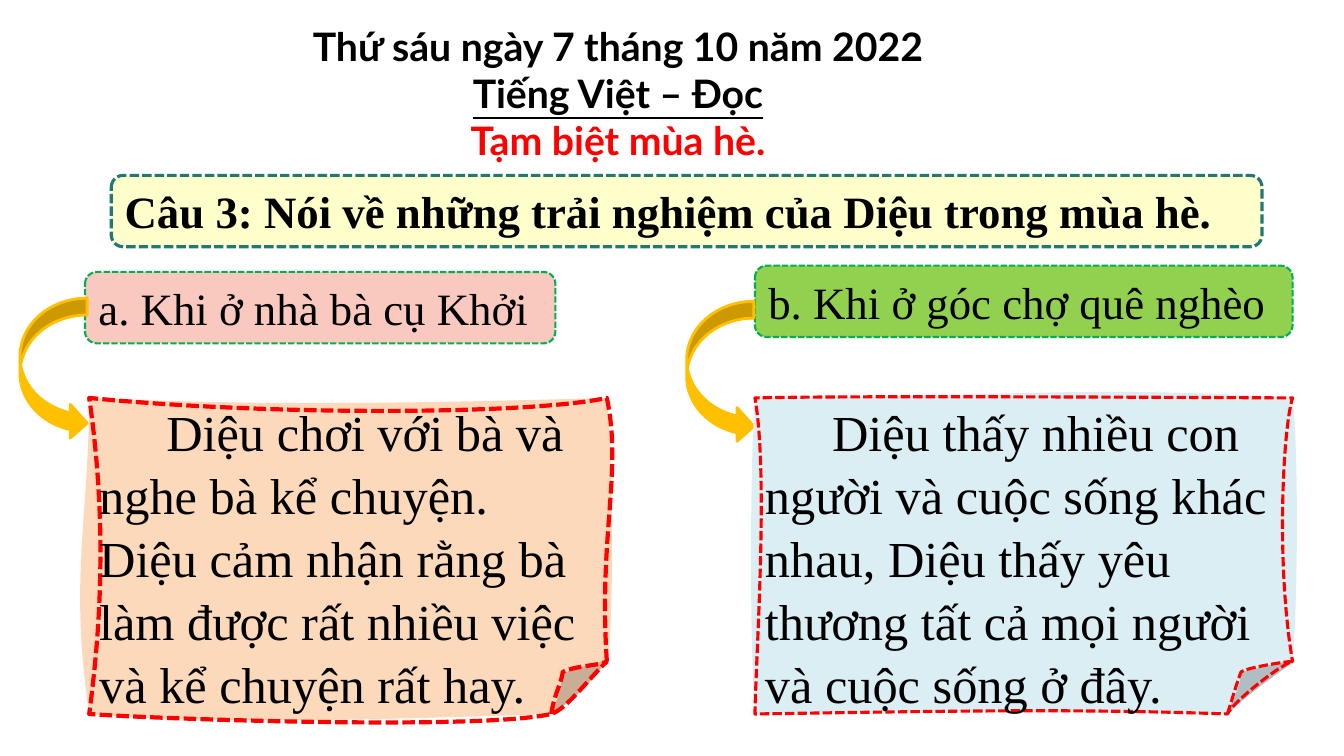
from lxml.etree import SubElement
from pptx import Presentation
from pptx.dml.color import RGBColor
from pptx.enum.dml import MSO_LINE
from pptx.enum.shapes import MSO_SHAPE
from pptx.enum.text import MSO_ANCHOR, MSO_AUTO_SIZE, PP_ALIGN
from pptx.oxml.ns import qn
from pptx.util import Pt

PX = 9525
BLACK = RGBColor(0x00, 0x00, 0x00)
RED = RGBColor(0xFF, 0x00, 0x00)
TEAL = RGBColor(0x21, 0x78, 0x75)
GREEN = RGBColor(0x00, 0xB0, 0x50)
LIME = RGBColor(0x92, 0xD0, 0x50)
GOLD = RGBColor(0xFF, 0xC0, 0x00)
CREAM = RGBColor(0xFF, 0xFF, 0xCC)
PINK = RGBColor(0xF9, 0xC9, 0xBF)
PEACH = RGBColor(0xFD, 0xD9, 0xBB)
SKY = RGBColor(0xDB, 0xEE, 0xF4)

# Each path is a start point, then curves of two control points and an end.
LEFT = {
    "page": [(85, 379),
             (225, 385), (333, 386), (578, 379),
             (583, 416), (586, 592), (578, 630),
             (566, 645), (544, 663), (525, 680),
             (400, 684), (219, 691), (85, 680),
             (66, 551), (84, 501), (85, 379)],
    "fold": [(525, 680),
             (529, 673), (537, 647), (536, 640),
             (546, 640), (563, 630), (578, 630),
             (561, 649), (555, 661), (525, 680)],
    "edge": [(525, 680),
             (528, 661), (535, 650), (536, 640),
             (548, 634), (571, 634), (578, 630),
             (561, 646), (539, 676), (525, 680),
             (455, 696), (133, 684), (85, 680),
             (95, 605), (103, 503), (85, 379),
             (257, 396), (504, 395), (578, 379),
             (593, 450), (570, 509), (578, 630)],
}
RIGHT = {
    "page": [(719, 379),
             (946, 379), (1028, 366), (1231, 379),
             (1237, 430), (1236, 577), (1231, 630),
             (1212, 636), (1189, 657), (1169, 680),
             (1078, 679), (824, 675), (719, 680),
             (714, 622), (714, 443), (719, 379)],
    "fold": [(1169, 680),
             (1173, 668), (1182, 654), (1182, 640),
             (1206, 635), (1220, 630), (1231, 630),
             (1224, 638), (1197, 653), (1169, 680)],
    "edge": [(1169, 680),
             (1173, 667), (1180, 644), (1182, 640),
             (1187, 636), (1224, 630), (1231, 630),
             (1219, 633), (1174, 669), (1169, 680),
             (1028, 675), (915, 677), (719, 680),
             (720, 622), (732, 453), (719, 379),
             (798, 377), (1032, 378), (1231, 379),
             (1222, 407), (1215, 537), (1231, 630)],
}
MODES = {
    "page": {"stroke": "0"},
    "fold": {"stroke": "0", "fill": "darkenLess"},
    "edge": {"fill": "none"},
}


class Board:
    head = "Lato"
    body = "Times New Roman"

    def __init__(self, slide):
        self.slide = slide

    def run(self, para, text, font, size, color=BLACK, bold=False, under=False):
        run = para.add_run()
        run.text = text
        face = run.font
        face.name, face.size, face.bold = font, Pt(size), bold
        face.underline = under
        face.color.rgb = color

    def paint(self, shape, fill, line, width, dash=True):
        shape.shadow.inherit = False
        shape.fill.solid()
        shape.fill.fore_color.rgb = fill
        shape.line.color.rgb = line
        shape.line.width = Pt(width)
        if dash:
            shape.line.dash_style = MSO_LINE.SQUARE_DOT

    def title(self, box, lines):
        shape = self.slide.shapes.title
        shape.left, shape.top, shape.width, shape.height = [v * PX for v in box]
        frame = shape.text_frame
        frame.auto_size = MSO_AUTO_SIZE.NONE
        frame.vertical_anchor = MSO_ANCHOR.TOP
        for i, (text, color, under) in enumerate(lines):
            para = frame.add_paragraph() if i else frame.paragraphs[0]
            para.alignment = PP_ALIGN.CENTER
            self.run(para, text, self.head, 28, color, True, under)

    def shape(self, kind, box):
        return self.slide.shapes.add_shape(kind, *[v * PX for v in box])

    def label(self, box, text, fill, line, width, bold=False):
        shape = self.shape(MSO_SHAPE.ROUNDED_RECTANGLE, box)
        self.paint(shape, fill, line, width)
        para = shape.text_frame.paragraphs[0]
        para.alignment = PP_ALIGN.LEFT
        self.run(para, text, self.body, 32, BLACK, bold)

    def arrow(self, box):
        shape = self.shape(MSO_SHAPE.CURVED_RIGHT_ARROW, box)
        self.paint(shape, GOLD, GOLD, 2, False)

    def sheet(self, paths, text, fill, width):
        """Draw a curled page with a folded corner and its text."""
        ends = paths["page"][::3]
        left, top = ends[0]
        wide, high = max(x for x, y in ends) - left, max(y for x, y in ends) - top
        form = self.slide.shapes.build_freeform(0, 0, PX)
        form.add_line_segments([(wide, 0), (wide, high), (0, high)])
        shape = form.convert_to_shape(left * PX, top * PX)
        self.curve(shape, paths, left, top, wide, high)
        self.paint(shape, fill, RED, width)
        frame = shape.text_frame
        frame.word_wrap = True
        frame.vertical_anchor = MSO_ANCHOR.MIDDLE
        para = frame.paragraphs[0]
        para.alignment = PP_ALIGN.LEFT
        para.line_spacing = 1.04
        para._p.get_or_add_pPr().set("indent", str(64 * PX))
        self.run(para, text, self.body, 36)

    def curve(self, shape, paths, left, top, wide, high):
        """Replace the straight outline with curved paths."""
        root = shape._element.spPr.find(".//" + qn("a:pathLst"))
        root.clear()
        for name, dots in paths.items():
            path = SubElement(root, qn("a:path"), w=str(wide), h=str(high), **MODES[name])
            steps = [("a:moveTo", dots[:1])]
            steps += [("a:cubicBezTo", dots[i:i + 3]) for i in range(1, len(dots), 3)]
            for tag, part in steps:
                step = SubElement(path, qn(tag))
                for x, y in part:
                    SubElement(step, qn("a:pt"), x=str(x - left), y=str(y - top))
            if name != "edge":
                SubElement(path, qn("a:close"))


def main():
    deck = Presentation()
    deck.slide_width, deck.slide_height = 1280 * PX, 720 * PX
    board = Board(deck.slides.add_slide(deck.slide_layouts[5]))
    board.title((202, 16, 773, 145), [
        ("Thứ sáu ngày 7 tháng 10 năm 2022", BLACK, False),
        ("Tiếng Việt – Đọc", BLACK, True),
        ("Tạm biệt mùa hè.", RED, False),
    ])
    board.label((106, 167, 1096, 68),
                "Câu 3: Nói về những trải nghiệm của Diệu trong mùa hè.",
                CREAM, TEAL, 2.25, True)
    board.label((81, 259, 448, 68), "a. Khi ở nhà bà cụ Khởi", PINK, GREEN, 1.5)
    board.label((719, 253, 512, 68), "b. Khi ở góc chợ quê nghèo", LIME, GREEN, 1.5)
    board.arrow((19, 284, 64, 135))
    board.sheet(LEFT, "Diệu chơi với bà và nghe bà kể chuyện. Diệu cảm nhận rằng bà "
                "làm được rất nhiều việc và kể chuyện rất hay.", PEACH, 3)
    board.arrow((654, 287, 64, 135))
    board.sheet(RIGHT, "Diệu thấy nhiều con người và cuộc sống khác nhau, Diệu thấy yêu "
                "thương tất cả mọi người và cuộc sống ở đây.", SKY, 2.25)
    deck.save("out.pptx")


if __name__ == "__main__":
    main()
